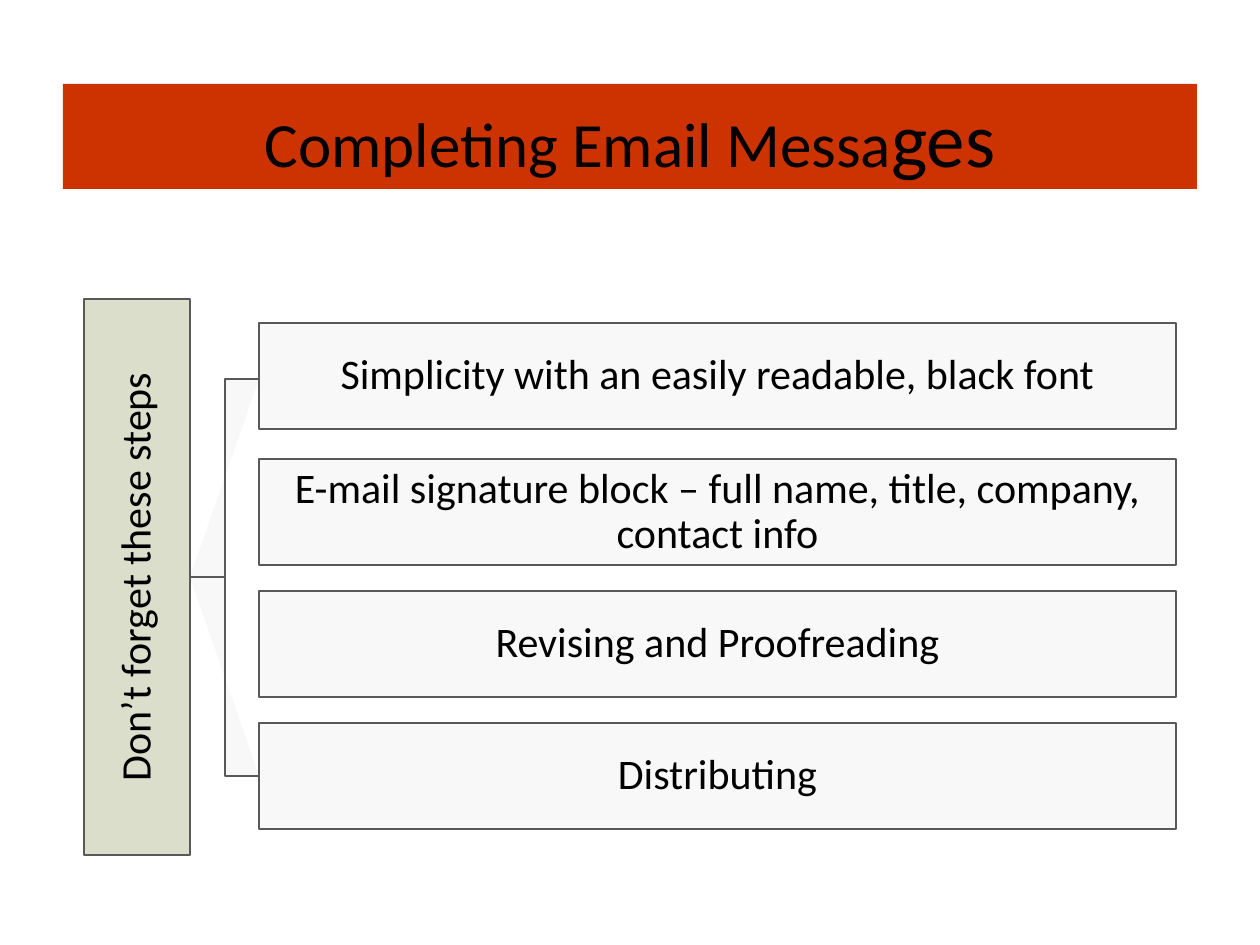
"""Build the slide on completing email messages."""
from dataclasses import dataclass

from pptx import Presentation
from pptx.dml.color import RGBColor
from pptx.enum.shapes import MSO_SHAPE as Preset
from pptx.enum.text import MSO_ANCHOR as Anchor, PP_ALIGN as Align
from pptx.shapes.autoshape import Shape
from pptx.slide import Slide
from pptx.util import Emu, Pt

EMU_PER_PX = 914400 / 126
PALE, SAGE, RED, GREY, BLACK = "F8F8F8", "DCDECC", "CC3300", "595959", "000000"


@dataclass(frozen=True)
class Box:
    left: int
    top: int
    width: int
    height: int
    fill: str
    runs: tuple[tuple[str, int], ...]
    rotation: int = 0


BAR_HEIGHT = 106
SPINE_RIGHT, ELBOW, STEP_LEFT, STEP_WIDTH = 190, 225, 259, 917
MIDDLE, BRACKET_ENDS = 577, (776, 379)

TITLE = Box(63, 84, 1134, 105, RED, (("Completing Email Messa", 36), ("ges", 44)))
SPINE = Box(-141, 524, 556, BAR_HEIGHT, SAGE, (("Don’t forget these steps", 24),), 270)
STEPS = (
    (323, "Simplicity with an easily readable, black font"),
    (459, "E-mail signature block – full name, title, company, contact info"),
    (591, "Revising and Proofreading"),
    (723, "Distributing"),
)


def px(length: int) -> Emu:
    return Emu(round(length * EMU_PER_PX))


def colour(value: str) -> RGBColor:
    return RGBColor.from_string(value)


def paint(shape: Shape, fill: str) -> None:
    shape.shadow.inherit = False
    shape.fill.solid()
    shape.fill.fore_color.rgb = colour(fill)


def outline(shape: Shape) -> None:
    shape.line.color.rgb = colour(GREY)
    shape.line.width = Pt(0.75)


def draw_bracket(slide: Slide, end: int) -> None:
    builder = slide.shapes.build_freeform(SPINE_RIGHT, MIDDLE, scale=EMU_PER_PX)
    builder.add_line_segments(
        ((ELBOW, MIDDLE), (ELBOW, end), (STEP_LEFT, end)), close=False
    )
    bracket = builder.convert_to_shape()
    paint(bracket, PALE)
    outline(bracket)


def draw_box(slide: Slide, box: Box) -> Shape:
    shape = slide.shapes.add_shape(
        Preset.RECTANGLE, px(box.left), px(box.top), px(box.width), px(box.height)
    )
    shape.rotation = box.rotation
    paint(shape, box.fill)
    shape.text_frame.word_wrap = True
    paragraph = shape.text_frame.paragraphs[0]
    paragraph.alignment = Align.CENTER
    for text, size in box.runs:
        run = paragraph.add_run()
        run.text = text
        run.font.name = "Calibri"
        run.font.size = Pt(size)
        run.font.color.rgb = colour(BLACK)
    return shape


def draw_title(slide: Slide) -> None:
    title = draw_box(slide, TITLE)
    title.line.fill.background()
    title.text_frame.vertical_anchor = Anchor.TOP


def draw_bar(slide: Slide, box: Box) -> None:
    bar = draw_box(slide, box)
    outline(bar)
    frame = bar.text_frame
    frame.vertical_anchor = Anchor.MIDDLE
    frame.margin_left = frame.margin_right = px(2)
    frame.margin_top = frame.margin_bottom = px(2)
    frame.paragraphs[0].line_spacing = 0.9


def main() -> None:
    presentation = Presentation()
    presentation.slide_width, presentation.slide_height = px(1260), px(945)
    slide = presentation.slides.add_slide(presentation.slide_layouts[6])
    for end in BRACKET_ENDS:
        draw_bracket(slide, end)
    draw_bar(slide, SPINE)
    for top, text in STEPS:
        draw_bar(slide, Box(STEP_LEFT, top, STEP_WIDTH, BAR_HEIGHT, PALE, ((text, 24),)))
    draw_title(slide)
    presentation.save("out.pptx")


if __name__ == "__main__":
    main()
